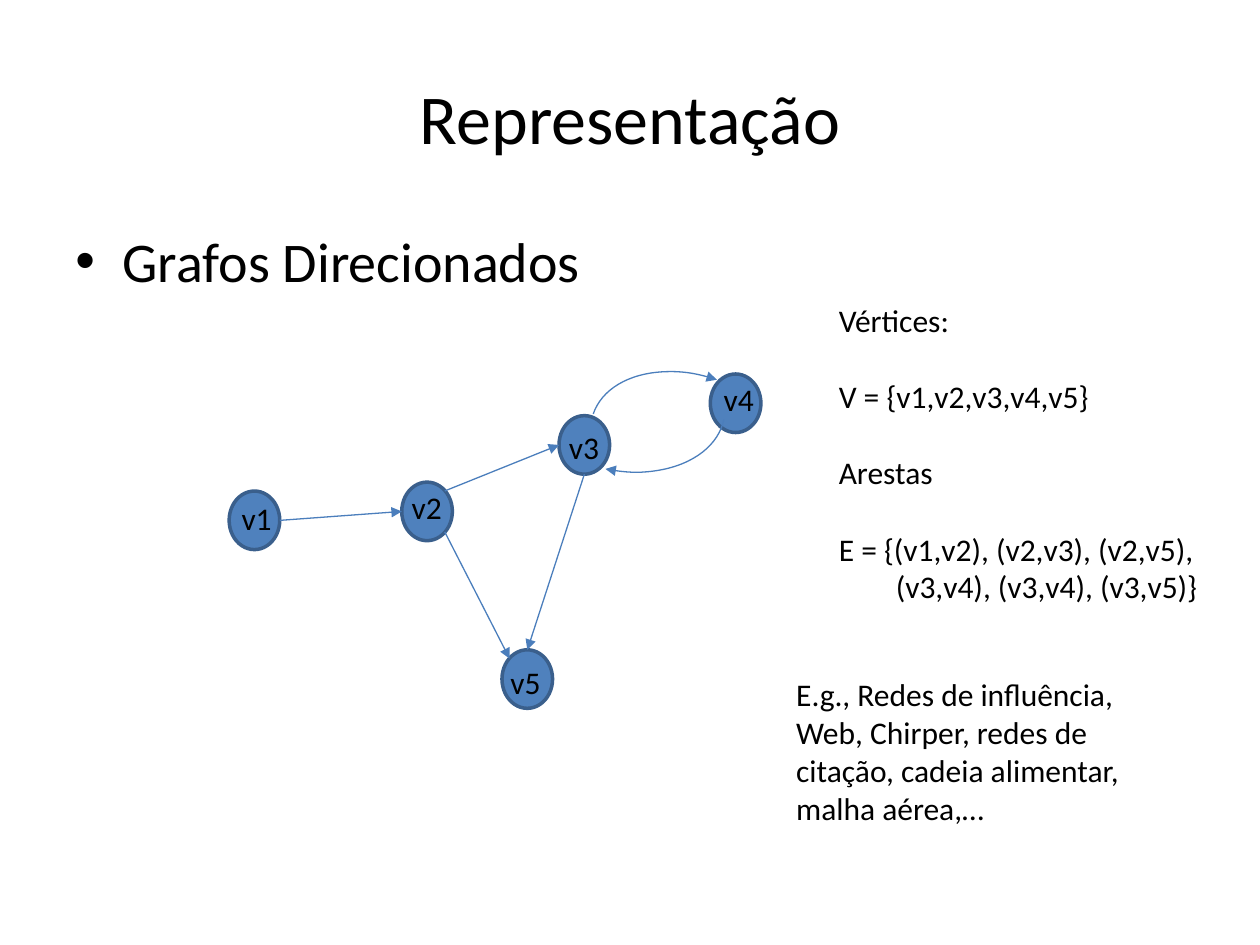
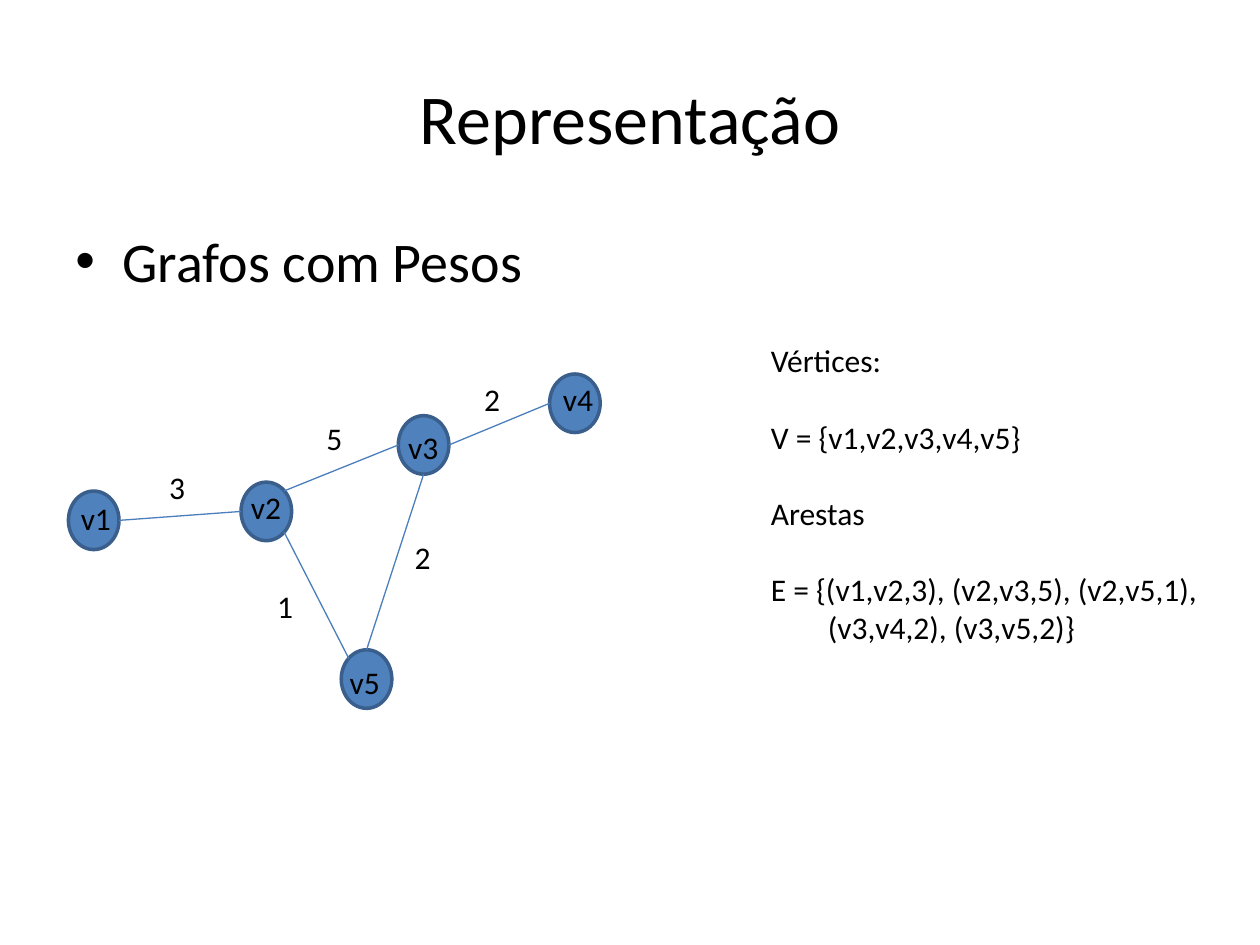
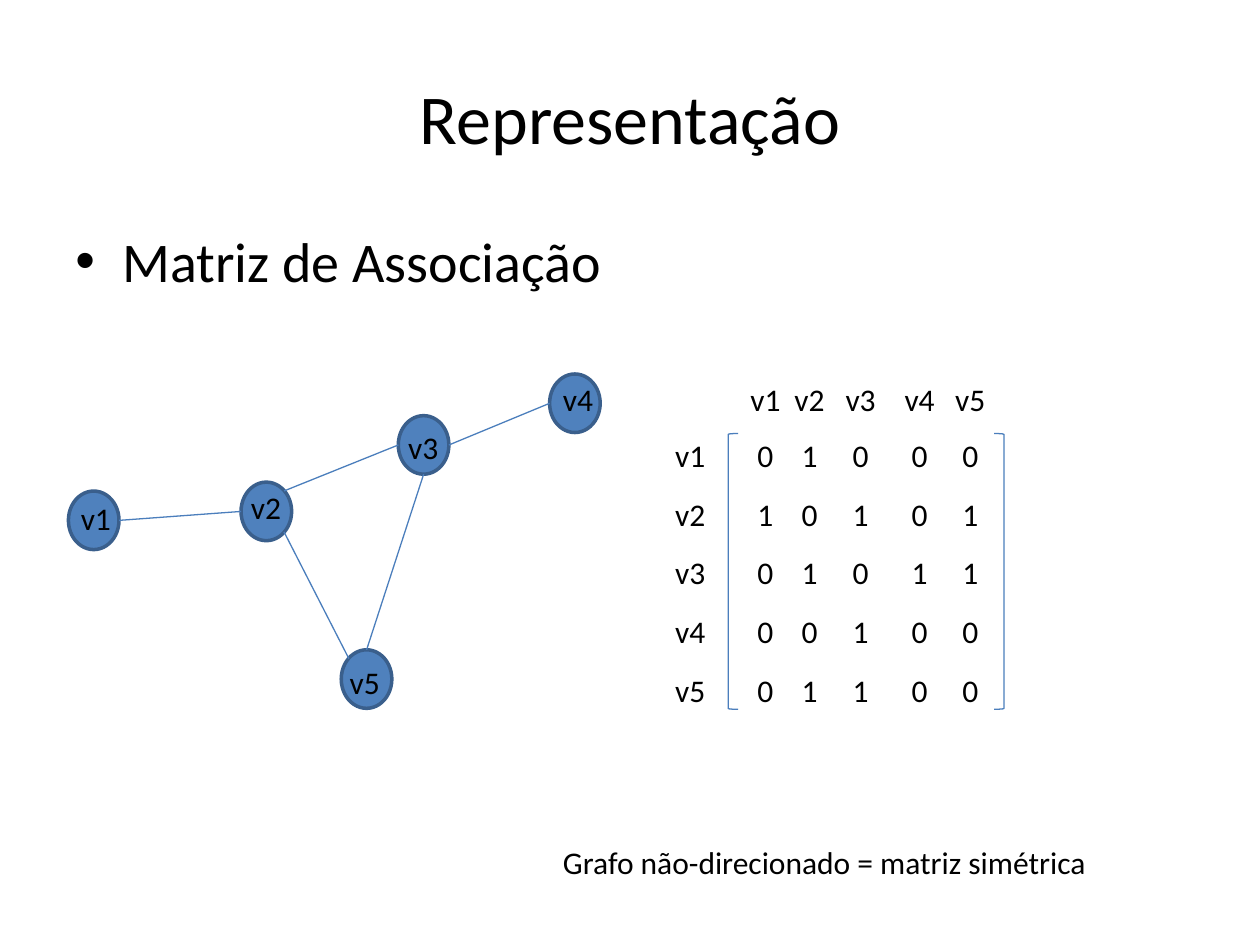
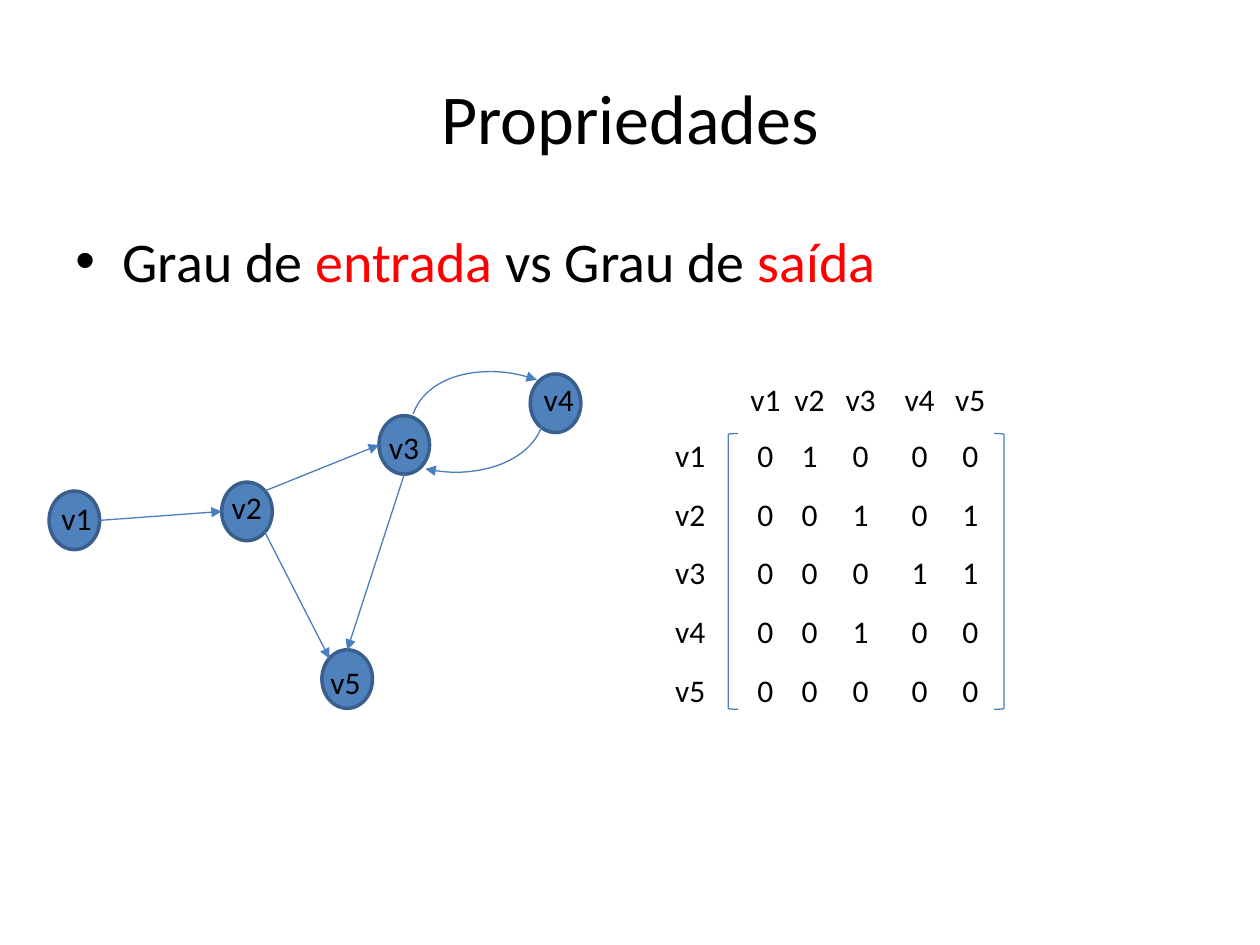
from lxml import etree
from pptx import Presentation
from pptx.dml.color import RGBColor
from pptx.enum.shapes import MSO_CONNECTOR, MSO_SHAPE
from pptx.enum.text import MSO_ANCHOR, PP_ALIGN
from pptx.oxml.ns import qn
from pptx.util import Cm, Pt

STRAIGHT = MSO_CONNECTOR.STRAIGHT
ELLIPSE, ARC = MSO_SHAPE.OVAL, MSO_SHAPE.ARC
BRACKETS = (MSO_SHAPE.LEFT_BRACKET, MSO_SHAPE.RIGHT_BRACKET)
MIDDLE = MSO_ANCHOR.MIDDLE
CENTER = PP_ALIGN.CENTER

COLORS = {
    "text": "000000",
    "highlight": "FF0000",
    "node": "4F81BD",
    "node_border": "3A5F8C",
    "edge": "4B7EBC",
}
FONT = "Calibri"
TITLE_SIZE, TOPIC_SIZE, TEXT_SIZE = 40, 32, 18
LINE_PITCH = Pt(22)

TITLE_BOX = (1.27, 0.76, 22.86, 3.18)
TOPIC_BOX = (1.27, 4.45, 22.86, 12.57)

# Graph, in cm from the left of v1 and the top of v4
GRAPH_TOP = 7.54
NODE_W, NODE_H = 1.02, 1.18
LABEL_W, LABEL_H = 1.12, 1.02
NODES = {
    "v1": (0, 2.36),
    "v2": (3.48, 2.18),
    "v3": (6.65, 0.84),
    "v4": (9.7, 0),
    "v5": (5.5, 5.56),
}
LABEL_SHIFTS = {
    "v1": (0, 0.03),
    "v2": (-0.05, 0),
    "v3": (-0.05, 0.13),
    "v4": (0.02, 0),
    "v5": (-0.08, 0.15),
}
# Points on a node's rim, as fractions of its width and height
TOP, BOTTOM, LEFT, RIGHT = (0.5, 0), (0.5, 1), (0, 0.5), (1, 0.5)
TOP_LEFT, TOP_RIGHT, BOTTOM_RIGHT = (0.15, 0.15), (0.85, 0.15), (0.85, 0.85)
SHARED_EDGES = [
    ("v1", RIGHT, "v2", LEFT),
    ("v2", TOP_RIGHT, "v3", LEFT),
    ("v2", BOTTOM_RIGHT, "v5", TOP_LEFT),
    ("v3", BOTTOM, "v5", TOP),
]
UNDIRECTED_EDGES = SHARED_EDGES + [("v3", RIGHT, "v4", LEFT)]
CYCLE_ARCS = [(7.9, -0.64, 288.9), (6.42, -1.65, 101.7)]
ARC_W, ARC_H = 2.92, 4.27
WEIGHTS = [
    ("3", 1.78, 1.78),
    ("5", 4.95, 0.79),
    ("1", 3.96, 4.17),
    ("2", 6.73, 3.18),
    ("2", 8.13, 0),
]

MATRIX_AT = (13.36, 7.54)
COLUMN_CENTERS = (0.3, 1.19, 2.22, 3.41, 4.43)


def rgb(name):
    return RGBColor.from_string(COLORS[name])


def style_runs(paragraph, size, color="text"):
    for run in paragraph.runs:
        run.font.size = Pt(size)
        run.font.name = FONT
        run.font.color.rgb = rgb(color)


def add_text(slide, box, lines, size=TEXT_SIZE, wrap=False):
    """Add a text box with one paragraph per line and return its frame."""
    frame = slide.shapes.add_textbox(*map(Cm, box)).text_frame
    frame.word_wrap = wrap
    frame.text = "\n".join(lines)
    for paragraph in frame.paragraphs:
        style_runs(paragraph, size)
    return frame


def add_outline(slide, preset, box, line_color="edge", line_width=0.75):
    shape = slide.shapes.add_shape(preset, *map(Cm, box))
    shape.shadow.inherit = False
    shape.fill.background()
    shape.line.color.rgb = rgb(line_color)
    shape.line.width = Pt(line_width)
    return shape


def add_arrowhead(shape):
    etree.SubElement(shape.line._get_or_add_ln(), qn("a:tailEnd"), type="triangle")


def add_heading(slide, title, topic):
    """Add the title and the bulleted topic, a list of (text, color) parts."""
    frame = add_text(slide, TITLE_BOX, [title], TITLE_SIZE, wrap=True)
    frame.vertical_anchor = MIDDLE
    frame.paragraphs[0].alignment = CENTER

    paragraph = add_text(slide, TOPIC_BOX, [""], wrap=True).paragraphs[0]
    paragraph.space_before = Pt(TOPIC_SIZE * 0.2)
    for text, color in topic:
        run = paragraph.add_run()
        run.text = text
        run.font.size = Pt(TOPIC_SIZE)
        run.font.name = FONT
        run.font.color.rgb = rgb(color)
    properties = paragraph._p.get_or_add_pPr()
    properties.set("marL", str(Cm(0.95)))
    properties.set("indent", str(-Cm(0.95)))
    etree.SubElement(properties, qn("a:buFont"), typeface="Arial")
    etree.SubElement(properties, qn("a:buChar"), char="•")


def add_edge(slide, start, end, directed):
    edge = slide.shapes.add_connector(STRAIGHT, *map(Cm, (*start, *end)))
    edge.line.color.rgb = rgb("edge")
    edge.line.width = Pt(0.75)
    if directed:
        add_arrowhead(edge)
    etree.SubElement(edge._element.spPr, qn("a:effectLst"))


def add_graph(slide, left, directed=False, weighted=False):
    def rim_point(name, site):
        x, y = NODES[name]
        return left + x + site[0] * NODE_W, GRAPH_TOP + y + site[1] * NODE_H

    for x, y in NODES.values():
        node = add_outline(slide, ELLIPSE, (left + x, GRAPH_TOP + y, NODE_W, NODE_H),
                           "node_border", 2)
        node.fill.solid()
        node.fill.fore_color.rgb = rgb("node")

    for source, exit_site, target, entry_site in (SHARED_EDGES if directed else UNDIRECTED_EDGES):
        add_edge(slide, rim_point(source, exit_site), rim_point(target, entry_site), directed)

    for name, (x, y) in NODES.items():
        dx, dy = LABEL_SHIFTS[name]
        add_text(slide, (left + x + dx, GRAPH_TOP + y + dy, LABEL_W, LABEL_H), [name])

    if directed:
        for x, y, angle in CYCLE_ARCS:
            arc = add_outline(slide, ARC, (left + x, GRAPH_TOP + y, ARC_W, ARC_H))
            arc.rotation = angle
            add_arrowhead(arc)
    if weighted:
        for weight, x, y in WEIGHTS:
            add_text(slide, (left + x, GRAPH_TOP + y, 0.84, LABEL_H), [weight])


def add_sets(slide, box, edge_lines):
    """List the vertex and edge sets, the second edge line indented."""
    lines = ["Vértices:", "V = {v1,v2,v3,v4,v5}", "Arestas", *edge_lines]
    *spaced, continuation = add_text(slide, box, lines).paragraphs
    for paragraph in spaced[1:]:
        paragraph.space_before = LINE_PITCH
    continuation._p.get_or_add_pPr().set("marL", str(Cm(1.15)))


def align_columns(paragraph):
    tabs = etree.SubElement(paragraph._p.get_or_add_pPr(), qn("a:tabLst"))
    for center in COLUMN_CENTERS:
        etree.SubElement(tabs, qn("a:tab"), pos=str(Cm(center)), algn="ctr")


def add_matrix(slide, rows):
    """Add the bracketed matrix from rows of digits such as "01000"."""
    left, top = MATRIX_AT
    rows_top = top + 1.12

    def tabbed(values):
        return "".join("\t" + value for value in values)

    header = add_text(slide, (left + 1.52, top, 5.61, LABEL_H), [tabbed(NODES)], wrap=True)
    names = add_text(slide, (left, rows_top, LABEL_W, 7.01), list(NODES))
    cells = add_text(slide, (left + 1.52, rows_top, 5.61, 7.01),
                     [tabbed(row) for row in rows], wrap=True)
    for paragraph in (*names.paragraphs, *cells.paragraphs):
        paragraph.space_after = Pt(12)
    for paragraph in (*header.paragraphs, *cells.paragraphs):
        align_columns(paragraph)
    for bracket, x in zip(BRACKETS, (1.32, 6.68)):
        add_outline(slide, bracket, (left + x, top + 1.2, 0.2, 5.56))


def directed_slide(slide):
    add_heading(slide, "Representação", [("Grafos Direcionados", "text")])
    add_graph(slide, 4.62, directed=True)
    add_text(slide, (15.8, 13.49, 8.03, 3.33),
             ["E.g., Redes de influência, Web, Chirper, redes de citação, "
              "cadeia alimentar, malha aérea,…"], wrap=True)
    add_sets(slide, (16.66, 5.94, 7.85, 6.4),
             ["E = {(v1,v2), (v2,v3), (v2,v5),", "(v3,v4), (v3,v4), (v3,v5)}"])


def weighted_slide(slide):
    add_heading(slide, "Representação", [("Grafos com Pesos", "text")])
    add_graph(slide, 1.38, weighted=True)
    add_sets(slide, (15.29, 6.76, 9.22, 6.4),
             ["E = {(v1,v2,3), (v2,v3,5), (v2,v5,1),", "(v3,v4,2), (v3,v5,2)}"])


def association_slide(slide):
    add_heading(slide, "Representação", [("Matriz de Associação", "text")])
    add_graph(slide, 1.38)
    add_matrix(slide, ["01000", "10101", "01011", "00100", "01100"])
    add_text(slide, (11.1, 16.87, 11.15, LABEL_H), ["Grafo não-direcionado = matriz simétrica"])


def degree_slide(slide):
    add_heading(slide, "Propriedades", [
        ("Grau de ", "text"), ("entrada ", "highlight"),
        ("vs Grau de ", "text"), ("saída", "highlight"),
    ])
    add_graph(slide, 0.99, directed=True)
    add_matrix(slide, ["01000", "00101", "00011", "00100", "00000"])


def main():
    deck = Presentation()
    deck.slide_width, deck.slide_height = Cm(25.4), Cm(19.05)
    blank = deck.slide_layouts[6]
    for build in (directed_slide, weighted_slide, association_slide, degree_slide):
        build(deck.slides.add_slide(blank))
    deck.save("out.pptx")


if __name__ == "__main__":
    main()
